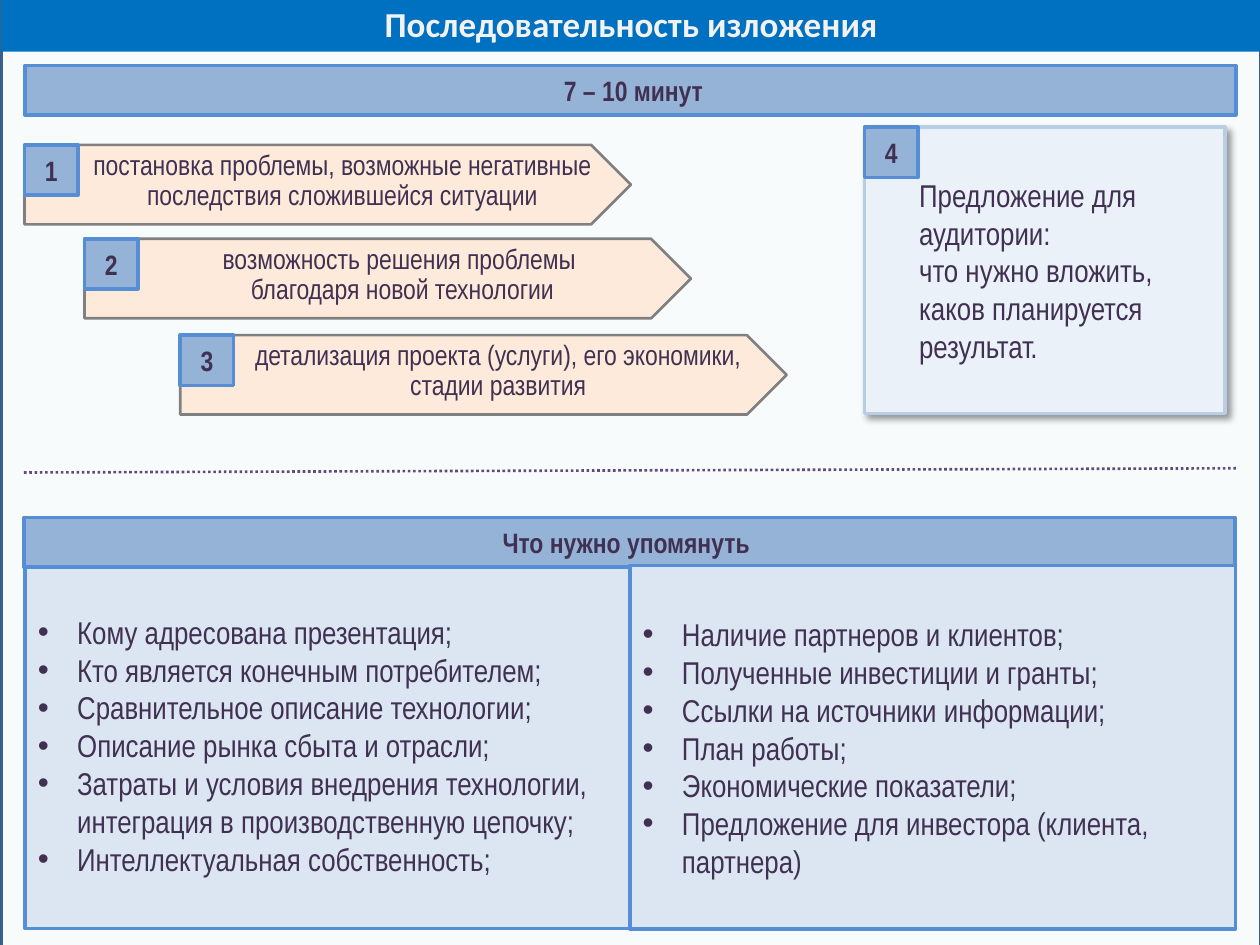
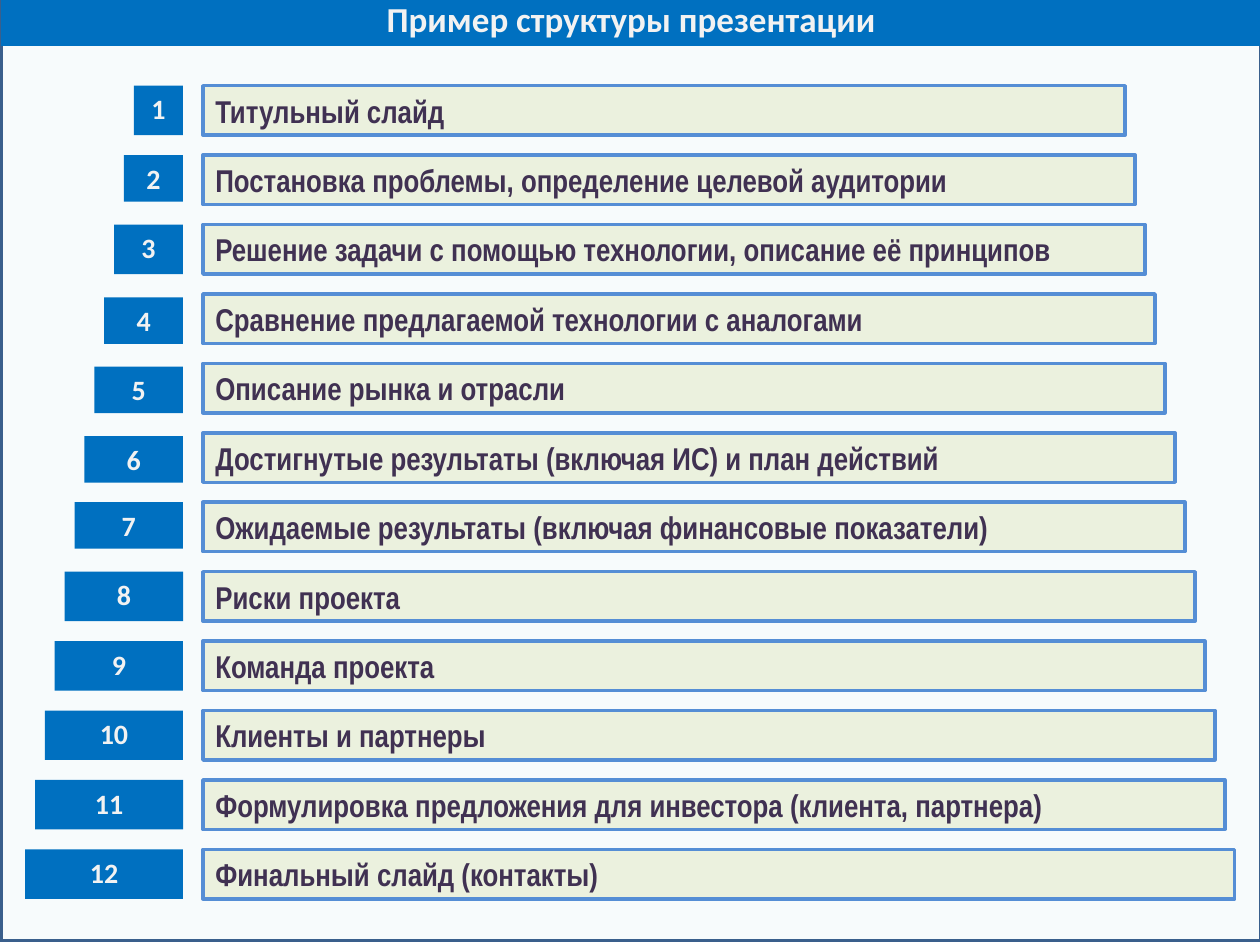
from copy import deepcopy

from lxml import etree
from pptx import Presentation
from pptx.dml.color import RGBColor
from pptx.enum.dml import MSO_LINE
from pptx.enum.shapes import MSO_CONNECTOR, MSO_SHAPE
from pptx.enum.text import MSO_ANCHOR, MSO_AUTO_SIZE, PP_ALIGN
from pptx.oxml.ns import qn
from pptx.util import Pt

RECT, PENTAGON = MSO_SHAPE.RECTANGLE, MSO_SHAPE.PENTAGON
STRAIGHT = MSO_CONNECTOR.STRAIGHT
TOP, MIDDLE = MSO_ANCHOR.TOP, MSO_ANCHOR.MIDDLE
LEFT, CENTER = PP_ALIGN.LEFT, PP_ALIGN.CENTER
NO_FIT, DOTTED = MSO_AUTO_SIZE.NONE, MSO_LINE.ROUND_DOT
TWO_CONTENT, TITLE_ONLY = 3, 5

BLUE = RGBColor(0x00, 0x70, 0xC0)
WHITE = RGBColor(0xF2, 0xF2, 0xF2)
PANEL = RGBColor(0xF3, 0xF9, 0xFB)
PANEL_EDGE = RGBColor(0x3A, 0x5F, 0x8C)
BAND = RGBColor(0x95, 0xB3, 0xD7)
BAND_EDGE = RGBColor(0x55, 0x8E, 0xD5)
LIST_FILL = RGBColor(0xDC, 0xE6, 0xF2)
PEACH = RGBColor(0xFD, 0xEA, 0xDA)
GRAY = RGBColor(0x80, 0x80, 0x80)
OFFER_FILL = RGBColor(0xEB, 0xF1, 0xF8)
OFFER_EDGE = RGBColor(0xB9, 0xCD, 0xE5)
GREEN = RGBColor(0xEB, 0xF1, 0xDE)
INK = RGBColor(0x40, 0x31, 0x52)
PURPLE = RGBColor(0x60, 0x4A, 0x7B)

TITLE_FONT = {"name": "Calibri", "size": Pt(20), "bold": True}
NUMBER_FONT = {"name": "Calibri", "size": Pt(16), "bold": True}
BAND_FONT = {"name": "Arial Narrow", "size": Pt(16), "bold": True}
STEP_FONT = {"name": "Arial Narrow", "size": Pt(16), "bold": False}
BODY_FONT = {"name": "Arial Narrow", "size": Pt(18), "bold": False}
ROW_FONT = {"name": "Arial Narrow", "size": Pt(18), "bold": True}

STEPS = [
    (14, 82.8, "постановка проблемы, возможные негативные последствия сложившейся ситуации"),
    (48.3, 136.5, "возможность решения проблемы \nблагодаря новой технологии"),
    (103, 191.5, "детализация проекта (услуги), его экономики, стадии развития"),
]
OFFER = "Предложение для аудитории: \nчто нужно вложить, каков планируется результат."
AUDIENCE = [
    "Кому адресована презентация;",
    "Кто является конечным потребителем;",
    "Сравнительное описание технологии;",
    "Описание рынка сбыта и отрасли;",
    "Затраты и условия внедрения технологии, интеграция в производственную цепочку;",
    "Интеллектуальная собственность;",
]
EVIDENCE = [
    "Наличие партнеров и клиентов;",
    "Полученные инвестиции и гранты;",
    "Ссылки на источники информации;",
    "План работы;",
    "Экономические показатели;",
    "Предложение для инвестора (клиента, партнера)",
]
SECTIONS = [
    "Титульный слайд",
    "Постановка проблемы, определение целевой аудитории",
    "Решение задачи с помощью технологии, описание её принципов",
    "Сравнение предлагаемой технологии с аналогами",
    "Описание рынка и отрасли",
    "Достигнутые результаты (включая ИС) и план действий",
    "Ожидаемые результаты (включая финансовые показатели)",
    "Риски проекта",
    "Команда проекта",
    "Клиенты и партнеры",
    "Формулировка предложения для инвестора (клиента, партнера)",
    "Финальный слайд (контакты)",
]
SHORT_NUMBERS = {2, 4, 5, 6, 7}
LOWERED_NUMBERS = {4, 5, 6}


def paint(sp, fill, edge=None, width=2):
    sp.fill.solid()
    sp.fill.fore_color.rgb = fill
    if edge is None:
        sp.line.fill.background()
    else:
        sp.line.color.rgb = edge
        sp.line.width = Pt(width)


def add_box(slide, kind, frame, fill, edge=None, width=2):
    sp = slide.shapes.add_shape(kind, *map(Pt, frame))
    sp.shadow.inherit = False
    paint(sp, fill, edge, width)
    return sp


def place(slide, sp, frame):
    for name, value in zip(("left", "top", "width", "height"), frame):
        setattr(sp, name, Pt(value))
    slide.shapes._spTree.append(sp._element)


def write(sp, lines, font, color=INK, align=CENTER, anchor=MIDDLE,
          indent=0, hanging=0, spacing=1.0):
    tf = sp.text_frame
    for name, value in {"word_wrap": True, "auto_size": NO_FIT,
                        "vertical_anchor": anchor}.items():
        setattr(tf, name, value)
    for i, line in enumerate(lines):
        p = tf.paragraphs[0] if i == 0 else tf.add_paragraph()
        p.text = line
        for name, value in {"alignment": align, "line_spacing": spacing,
                            "space_before": Pt(0)}.items():
            setattr(p, name, value)
        pPr = p._p.get_or_add_pPr()
        pPr.set("marL", str(Pt(indent)))
        pPr.set("indent", str(Pt(-hanging)))
        for r in p.runs:
            for name, value in font.items():
                setattr(r.font, name, value)
            r.font.color.rgb = color
        for br in p._p.findall(qn("a:br")):
            br.insert(0, deepcopy(p.runs[0]._r.rPr))


def add_effects(sp):
    spPr = sp._element.spPr
    for old in spPr.findall(qn("a:effectLst")):
        spPr.remove(old)
    return etree.SubElement(spPr, qn("a:effectLst"))


def add_shadow(sp, blur, distance, degrees, opacity):
    shadow = etree.SubElement(
        add_effects(sp), qn("a:outerShdw"), blurRad=str(Pt(blur)),
        dist=str(Pt(distance)), dir=str(degrees * 60000), algn="tl")
    black = etree.SubElement(shadow, qn("a:srgbClr"), val="000000")
    etree.SubElement(black, qn("a:alpha"), val=str(opacity * 1000))


def start_slide(prs, layout, title, panel_top, title_top):
    slide = prs.slides.add_slide(prs.slide_layouts[layout])
    panel = add_box(slide, RECT, (0.7, panel_top, 720, 542), PANEL, PANEL_EDGE)
    color = panel._element.spPr.find(qn("a:solidFill"))[0]
    etree.SubElement(color, qn("a:alpha"), val="62000")
    sp = slide.shapes.title
    place(slide, sp, (0.7, title_top, 720, 31.5))
    paint(sp, BLUE)
    write(sp, [title], TITLE_FONT, WHITE, anchor=TOP)
    return slide


def add_band(slide, frame, text):
    write(add_box(slide, RECT, frame, BAND, BAND_EDGE), [text], BAND_FONT)


def add_badge(slide, left, top, number):
    add_band(slide, (left, top, 30.5, 28.8), str(number))


def add_step(slide, left, top, text):
    sp = add_box(slide, PENTAGON, (left, top, 346.5, 45.4), PEACH, GRAY, 1.5)
    write(sp, [text], STEP_FONT, anchor=TOP, indent=28.3, spacing=0.9)


def add_offer(slide):
    sp = add_box(slide, RECT, (494, 72.7, 206, 163.5), OFFER_FILL, OFFER_EDGE)
    add_shadow(sp, 4, 3, 45, 40)
    sp.text_frame.margin_left = sp.text_frame.margin_right = Pt(2.9)
    write(sp, [OFFER], BODY_FONT, align=LEFT, indent=28.3)


def fill_list(slide, idx, frame, items):
    sp = slide.placeholders[idx]
    place(slide, sp, frame)
    paint(sp, LIST_FILL, BAND_EDGE)
    write(sp, items, BODY_FONT, align=LEFT, indent=22.5, hanging=22.5)


def add_divider(slide):
    line = slide.shapes.add_connector(STRAIGHT, *map(Pt, (706.3, 267.6, 12.5, 270)))
    line.line.color.rgb = PURPLE
    line.line.width = Pt(1.5)
    line.line.dash_style = DOTTED
    add_effects(line)


def add_section(slide, number, text):
    i = number - 1
    top = 49 + 39.67 * i
    bar = add_box(slide, RECT, (116, top, 527 + 5.69 * i, 28.3), GREEN, BAND_EDGE)
    write(bar, [text], ROW_FONT, align=LEFT)
    width = 28.1 + 5.65 * i
    height = 26.6 if number in SHORT_NUMBERS else 28.3
    drop = 1.9 if number in LOWERED_NUMBERS else 0
    sp = add_box(slide, RECT, (104.6 - width, top + drop, width, height), BLUE)
    write(sp, [str(number)], NUMBER_FONT, WHITE, anchor=TOP)


def build_sequence(prs):
    slide = start_slide(prs, TWO_CONTENT, "Последовательность изложения", 0, -2)
    add_band(slide, (14.2, 37.5, 692, 28.3), " 7 – 10 минут")
    for number, (left, top, text) in enumerate(STEPS, 1):
        add_step(slide, left, top, text)
        add_badge(slide, left, top, number)
    add_offer(slide)
    add_badge(slide, 494, 72.7, 4)
    add_divider(slide)
    fill_list(slide, 1, (14.4, 321, 345.6, 209.6), AUDIENCE)
    add_band(slide, (13.7, 295.7, 692, 28.3), "Что нужно упомянуть ")
    fill_list(slide, 2, (360, 323.2, 346, 207.8), EVIDENCE)


def build_structure(prs):
    slide = start_slide(prs, TITLE_ONLY, "Пример структуры презентации", -4.6, -5.2)
    for number, text in enumerate(SECTIONS, 1):
        add_section(slide, number, text)


def main():
    prs = Presentation()
    prs.slide_width, prs.slide_height = Pt(720), Pt(540)
    build_sequence(prs)
    build_structure(prs)
    prs.save("out.pptx")


if __name__ == "__main__":
    main()
